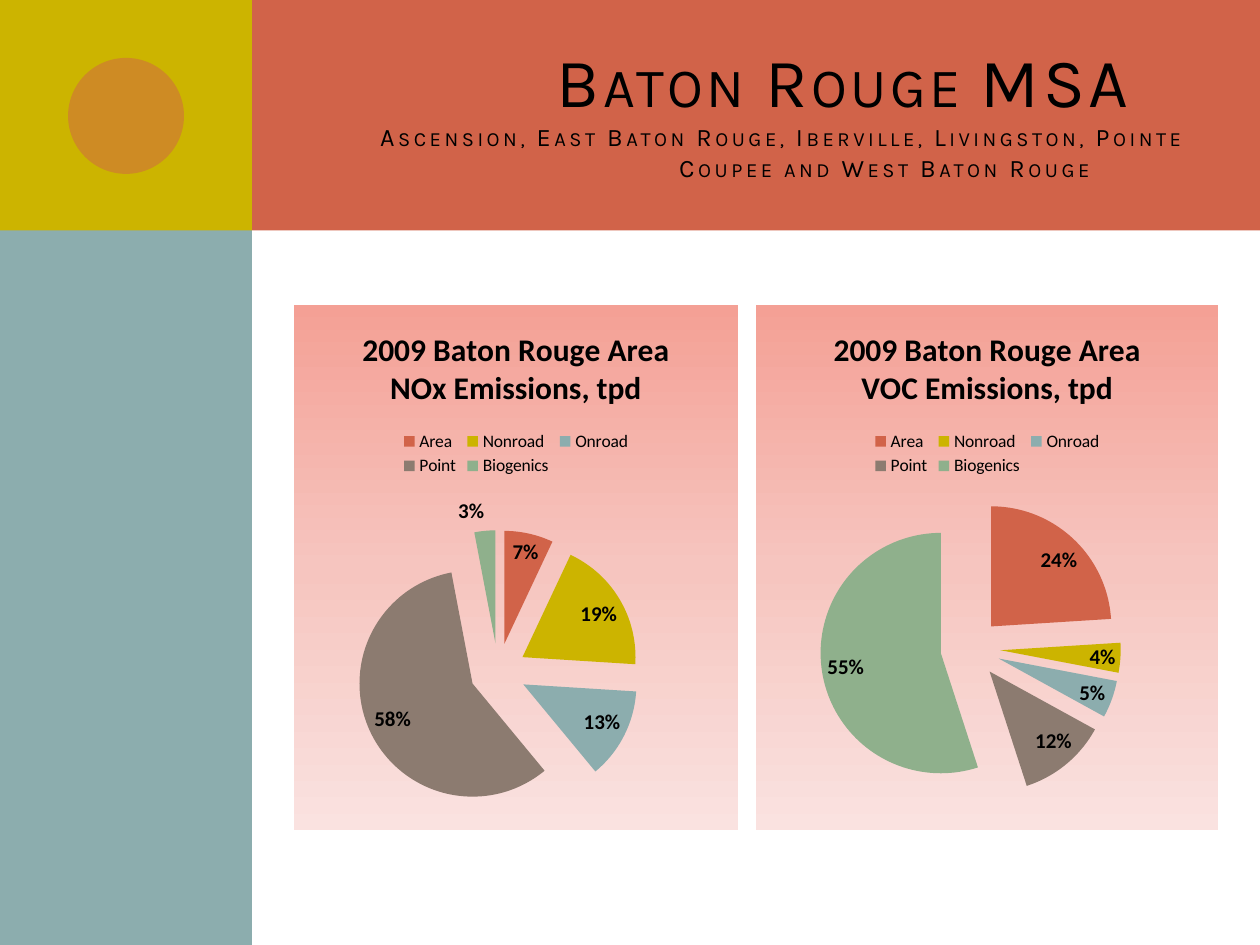
from lxml import etree
from pptx import Presentation
from pptx.chart.data import CategoryChartData
from pptx.dml.color import RGBColor
from pptx.enum.chart import XL_CHART_TYPE, XL_LABEL_POSITION, XL_LEGEND_POSITION
from pptx.enum.shapes import MSO_SHAPE
from pptx.enum.text import MSO_ANCHOR, PP_ALIGN
from pptx.oxml import parse_xml
from pptx.oxml.ns import nsdecls, qn
from pptx.util import Inches, Pt

RUST, MUSTARD, TEAL, TAUPE, SAGE = "D16349", "CCB400", "8CADAE", "8C7B70", "8FB08C"
SOURCES = {"Area": RUST, "Nonroad": MUSTARD, "Onroad": TEAL, "Point": TAUPE, "Biogenics": SAGE}
PANEL_STOPS = [(0, "F4A095"), (50, "F6C5BF"), (100, "FAE2E0")]


def color(value):
    return RGBColor.from_string(value)


def add_block(page, kind, place, fill, alpha=None):
    shape = page.shapes.add_shape(kind, *map(Inches, place))
    shape.shadow.inherit = False
    shape.fill.solid()
    shape.fill.fore_color.rgb = color(fill)
    shape.line.fill.background()
    if alpha is not None:
        tint = shape.fill._xPr.find(".//" + qn("a:srgbClr"))
        etree.SubElement(tint, qn("a:alpha")).set("val", str(alpha * 1000))


def add_span(para, text, size):
    span = para.add_run()
    span.text = text
    span.font.name = "Karla"
    span.font.size = Pt(size)
    span.font.color.rgb = color("000000")
    properties = span.font._element
    properties.set("cap", "small")
    properties.set("spc", "200")


def add_heading(page, place, title, subtitle):
    box = page.shapes.add_textbox(*map(Inches, place))
    frame = box.text_frame
    frame.word_wrap = True
    frame.vertical_anchor = MSO_ANCHOR.MIDDLE
    para = frame.paragraphs[0]
    para.alignment = PP_ALIGN.RIGHT
    add_span(para, title, 39.6)
    para.add_line_break()
    add_span(para, subtitle, 14.4)


def fill_panel(chart):
    stops = "".join(
        f'<a:gs pos="{position * 1000}"><a:srgbClr val="{value}"/></a:gs>'
        for position, value in PANEL_STOPS
    )
    panel = parse_xml(
        f'<c:spPr {nsdecls("c", "a")}><a:gradFill><a:gsLst>{stops}</a:gsLst>'
        '<a:lin ang="5400000" scaled="0"/></a:gradFill><a:ln><a:noFill/></a:ln></c:spPr>'
    )
    chart.element.find(qn("c:chart")).addnext(panel)


def style_labels(plot):
    plot.has_data_labels = True
    labels = plot.data_labels
    labels.show_percentage = True
    labels.show_value = False
    labels.number_format = "0%"
    labels.number_format_is_linked = False
    labels.position = XL_LABEL_POSITION.BEST_FIT
    labels.font.size = Pt(12)
    labels.font.bold = True


def add_pie(page, place, title, values):
    data = CategoryChartData()
    data.categories = list(SOURCES)
    data.add_series("Series 1", values)
    chart = page.shapes.add_chart(XL_CHART_TYPE.PIE, *map(Inches, place), data).chart
    chart.font.name = "Calibri"
    chart.font.size = Pt(10)
    chart.font.color.rgb = color("000000")
    fill_panel(chart)

    chart.has_title = True
    span = chart.chart_title.text_frame.paragraphs[0].add_run()
    span.text = title
    span.font.name = "Calibri"
    span.font.size = Pt(18)
    span.font.bold = True
    span.font.color.rgb = color("000000")

    chart.has_legend = True
    chart.legend.position = XL_LEGEND_POSITION.TOP
    chart.legend.include_in_layout = False

    plot = chart.plots[0]
    plot.vary_by_categories = True
    style_labels(plot)
    series = plot.series[0]
    explosion = parse_xml(f'<c:explosion {nsdecls("c")} val="25"/>')
    series._element.find(qn("c:tx")).addnext(explosion)
    for index, value in enumerate(SOURCES.values()):
        fill = series.points[index].format.fill
        fill.solid()
        fill.fore_color.rgb = color(value)


def main():
    deck = Presentation()
    deck.slide_width, deck.slide_height = Inches(10), Inches(7.5)
    page = deck.slides.add_slide(deck.slide_layouts[6])
    add_block(page, MSO_SHAPE.RECTANGLE, (0.5, 0, 9.5, 1.83), RUST)
    add_block(page, MSO_SHAPE.RECTANGLE, (0, 0, 2, 7.5), TEAL)
    add_block(page, MSO_SHAPE.RECTANGLE, (0, 0, 2, 1.83), MUSTARD)
    add_block(page, MSO_SHAPE.OVAL, (0.54, 0.46, 0.92, 0.92), RUST, alpha=50)
    add_heading(
        page, (2.67, 0.25, 6.83, 1.25), "Baton Rouge MSA",
        "Ascension, East Baton Rouge, Iberville, Livingston, Pointe Coupee and West Baton Rouge",
    )
    add_pie(page, (2.33, 2.42, 3.53, 4.17),
            "2009 Baton Rouge Area NOx Emissions, tpd", (7, 19, 13, 58, 3))
    add_pie(page, (6, 2.42, 3.67, 4.17),
            "2009 Baton Rouge Area VOC Emissions, tpd", (24, 4, 5, 12, 55))
    deck.save("out.pptx")


if __name__ == "__main__":
    main()
